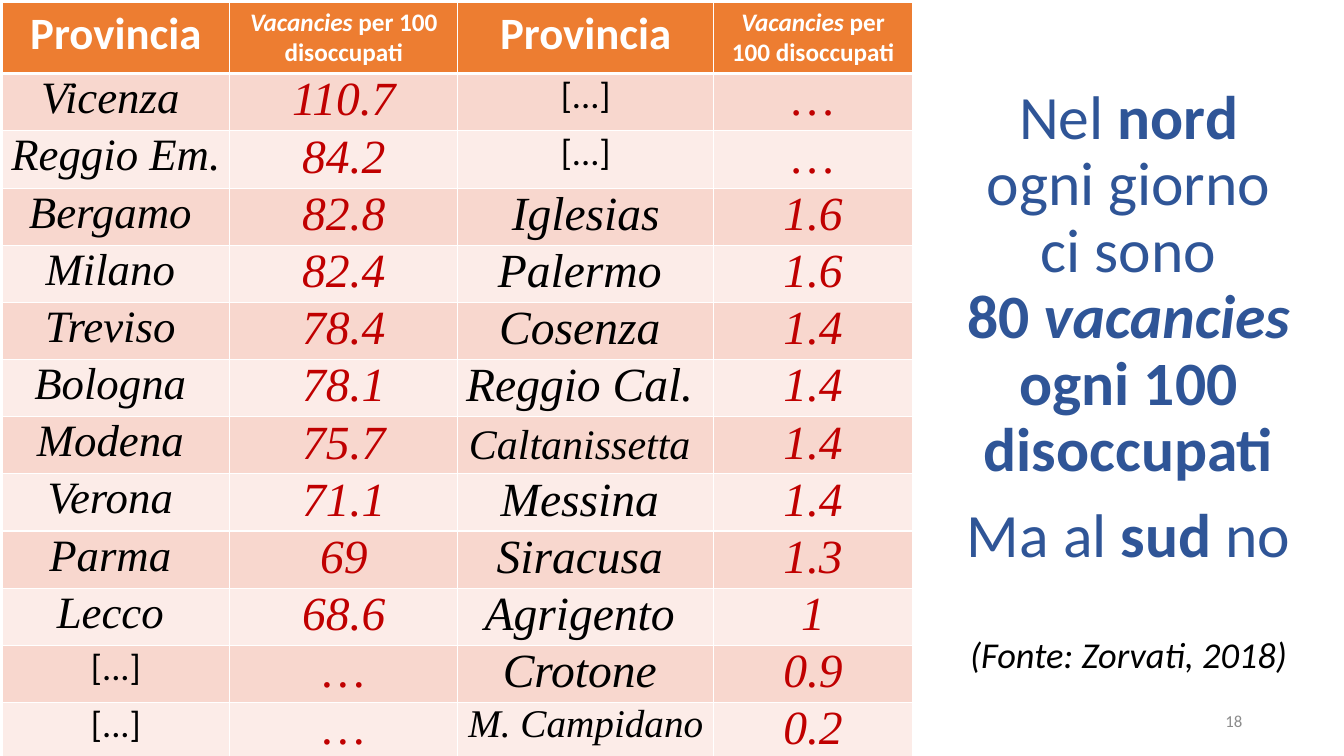
import pptx
import pptx.util
import pptx.dml.color
import pptx.enum.text
import pptx.oxml
import pptx.oxml.ns

Inches = pptx.util.Inches
ALIGN = pptx.enum.text.PP_ALIGN
MIDDLE = pptx.enum.text.MSO_ANCHOR.MIDDLE
SERIF = "Times New Roman"
BLUE, RED, BLACK, WHITE = "2F5597", "C00000", "000000", "FFFFFF"
HARD = chr(160)  # no-break space that ends most names


def color(code):
    return pptx.dml.color.RGBColor.from_string(code)


def write(para, text, size, code, style="", face="Calibri"):
    """Add a run; style holds b for bold and i for italic."""
    run = para.add_run()
    run.text = text
    font = run.font
    font.name, font.size = face, pptx.util.Pt(size)
    font.bold, font.italic = "b" in style, "i" in style
    font.color.rgb = color(code)


deck = pptx.Presentation()
deck.slide_width, deck.slide_height = Inches(13.33), Inches(7.5)
slide = deck.slides.add_slide(deck.slide_layouts[6])

# Message on the right: space before each paragraph, then its lines of runs
message = [
    (0, [[("Nel ", 44, BLUE), ("nord", 44, BLUE, "b"), (" ogni giorno", 44, BLUE)],
         [("ci sono", 44, BLUE)],
         [("80 ", 44, BLUE, "b"), ("vacancies", 44, BLUE, "bi")],
         [("ogni 100 disoccupati", 44, BLUE, "b")]]),
    (14, [[("Ma al ", 44, BLUE), ("sud ", 44, BLUE, "b"), ("no", 44, BLUE)]]),
    (47, [[("(Fonte: Zorvati, 2018)", 26, BLACK, "i")]]),
]
box = slide.shapes.add_textbox(Inches(9.41), Inches(0.4), Inches(3.57), Inches(6.76))
frame = box.text_frame
frame.word_wrap = True
frame.vertical_anchor = MIDDLE
for n, (gap, lines) in enumerate(message):
    para = frame.add_paragraph() if n else frame.paragraphs[0]
    para.alignment = ALIGN.CENTER
    para.line_spacing = 0.9
    para.space_before = pptx.util.Pt(gap)
    for m, line in enumerate(lines):
        if m:
            para.add_line_break()
        for run in line:
            write(para, *run)

# Page number
box = slide.shapes.add_textbox(Inches(9.42), Inches(6.95), Inches(3), Inches(0.4))
frame = box.text_frame
frame.word_wrap = True
frame.vertical_anchor = MIDDLE
frame.paragraphs[0].alignment = ALIGN.RIGHT
write(frame.paragraphs[0], "18", 12, "8C8C8C")

# Table of provinces: best on the left, worst on the right
rows = [
    ("Vicenza", "110.7", "[...]", "…"),
    ("Reggio Em.", "84.2", "[...]", "…"),
    ("Bergamo", "82.8", "Iglesias", "1.6"),
    ("Milano", "82.4", "Palermo", "1.6"),
    ("Treviso", "78.4", "Cosenza", "1.4"),
    ("Bologna", "78.1", "Reggio Cal.", "1.4"),
    ("Modena", "75.7", "Caltanissetta", "1.4"),
    ("Verona", "71.1", "Messina", "1.4"),
    ("Parma", "69", "Siracusa", "1.3"),
    ("Lecco", "68.6", "Agrigento", "1"),
    ("[...]", "…", "Crotone", "0.9"),
    ("[...]", "…", "M. Campidano", "0.2"),
    ("", "", "", ""),
]
small = {"Caltanissetta": 30, "M. Campidano": 28}
bare = ("Reggio Em.", "Iglesias", "M. Campidano")
widths = [2.26, 2.26, 2.54, 1.97]
heights = [0.71, 0.54, 0.57] + [0.54] * 9 + [0.52, 0.41]

table = slide.shapes.add_table(len(heights), 4, Inches(0.02), Inches(0.02),
                               Inches(sum(widths)), Inches(sum(heights))).table
for col, width in zip(table.columns, widths):
    col.width = Inches(width)
for row, height in zip(table.rows, heights):
    row.height = Inches(height)

for r in range(len(heights)):
    for c in range(4):
        cell = table.cell(r, c)
        props = cell._tc.get_or_add_tcPr()
        for side in "LRTB":
            thick = 3 if (r, side) in ((0, "B"), (1, "T")) else 1
            props.append(pptx.oxml.parse_xml(
                f'<a:ln{side} {pptx.oxml.ns.nsdecls("a")} w="{thick * 12700}">'
                f'<a:solidFill><a:srgbClr val="{WHITE}"/></a:solidFill></a:ln{side}>'))
        cell.fill.solid()
        cell.fill.fore_color.rgb = color(
            "ED7D31" if r == 0 else "F8D7CE" if r % 2 else "FCECE8")
        para = cell.text_frame.paragraphs[0]
        para.alignment = ALIGN.CENTER
        if r == 0:
            if c % 2:
                write(para, "Vacancies", 18, WHITE, "bi")
                write(para, " per 100 disoccupati", 18, WHITE, "b")
            else:
                write(para, "Provincia", 32, WHITE, "b")
            continue
        text = rows[r - 1][c]
        if not text:
            continue
        cell.margin_left = cell.margin_right = Inches(0.07)
        cell.margin_top = cell.margin_bottom = 0
        if text == "[...]":
            write(para, text, 26, BLACK)
        elif c % 2:
            write(para, text, 34, RED, "i", SERIF)
        else:
            size = 34 if c else 32
            write(para, text, small.get(text, size), BLACK, "i", SERIF)
            if text not in bare:
                write(para, HARD, size, BLACK, "i", SERIF)

deck.save("out.pptx")
